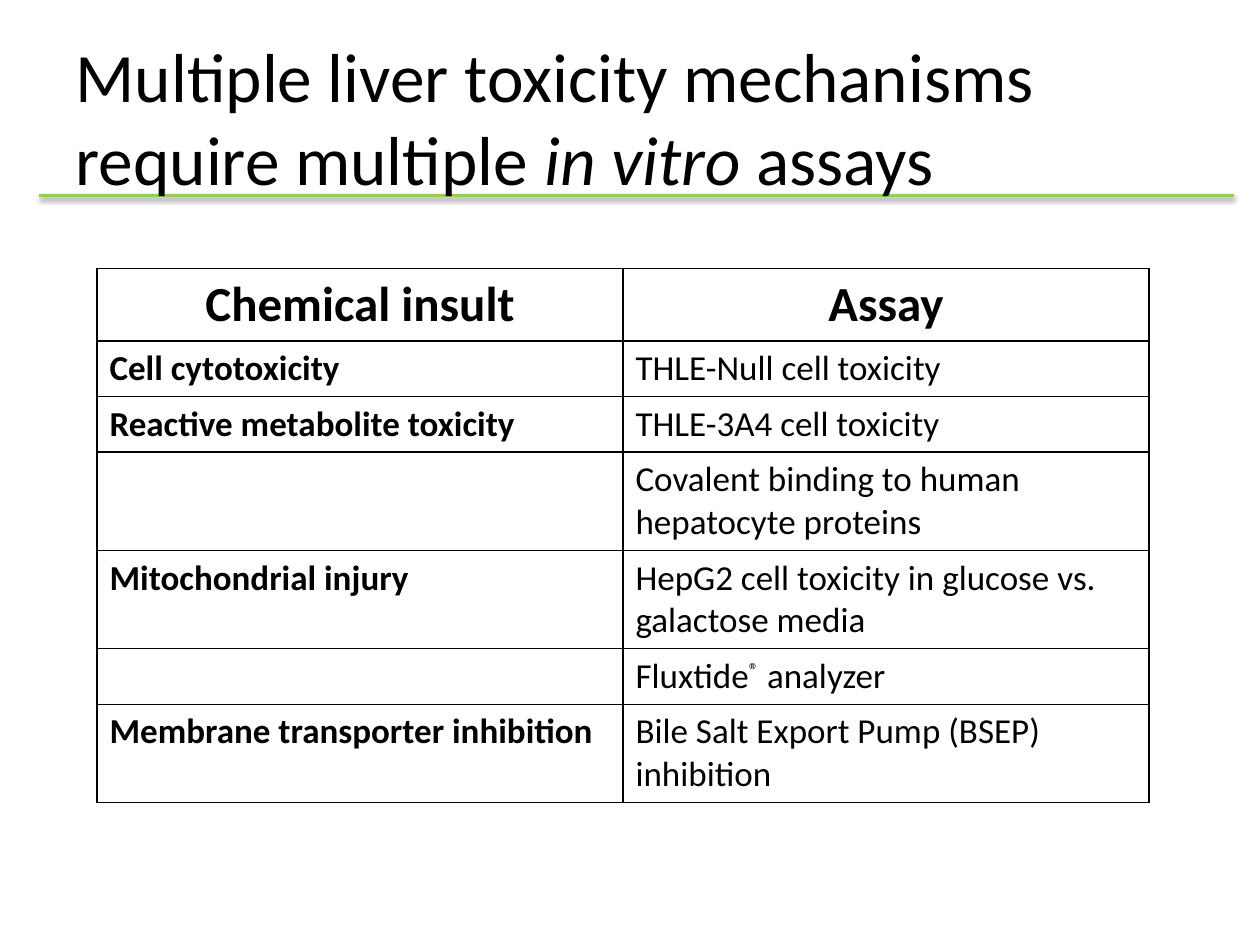
"""Build a slide with a table of liver toxicity mechanisms and their assays."""
import pptx
import pptx.util
import pptx.dml.color
import pptx.enum.text
import pptx.enum.shapes
import pptx.oxml
import pptx.oxml.ns

Pt = pptx.util.Pt
RGB = pptx.dml.color.RGBColor.from_string
PP_ALIGN = pptx.enum.text.PP_ALIGN
THEME = {
    "font": "Calibri", "text": "000000", "rule": "92D050", "border": "000000",
    "title": 39.6, "header": 28, "body": 20,
}
NS = pptx.oxml.ns.nsdecls("a")


def add_run(p, text, size, bold=False, italic=False):
    r = p.add_run()
    r.text = text
    r.font.name = THEME["font"]
    r.font.size = Pt(size)
    r.font.bold = bold
    r.font.italic = italic
    r.font.color.rgb = RGB(THEME["text"])
    return r


prs = pptx.Presentation()
prs.slide_width, prs.slide_height = Pt(720), Pt(540)
s = prs.slides.add_slide(prs.slide_layouts[5])

title = s.shapes.title
title.left, title.top, title.width, title.height = Pt(36), Pt(21.6), Pt(648), Pt(90)
tf = title.text_frame
tf.word_wrap = True
tf.auto_size = pptx.enum.text.MSO_AUTO_SIZE.NONE
tf.vertical_anchor = pptx.enum.text.MSO_ANCHOR.MIDDLE
p = tf.paragraphs[0]
p.alignment = PP_ALIGN.LEFT
add_run(p, "Multiple liver toxicity mechanisms", THEME["title"])
p.add_line_break()
add_run(p, "require multiple ", THEME["title"])
add_run(p, "in vitro", THEME["title"], italic=True)
add_run(p, " assays", THEME["title"])

rule = s.shapes.add_connector(
    pptx.enum.shapes.MSO_CONNECTOR.STRAIGHT, Pt(22.5), Pt(111.6), Pt(705), Pt(111.6))
rule.line.color.rgb = RGB(THEME["rule"])
rule.line.width = Pt(1.5)
rule._element.spPr.append(pptx.oxml.parse_xml(
    f'<a:effectLst {NS}><a:outerShdw blurRad="{Pt(3.1)}" dist="{Pt(1.6)}" dir="5400000" '
    'rotWithShape="0"><a:srgbClr val="000000"><a:alpha val="38000"/></a:srgbClr>'
    '</a:outerShdw></a:effectLst>'))
title._element.addprevious(rule._element)

rows = [
    ("Chemical insult", "Assay"),
    ("Cell cytotoxicity", "THLE-Null cell toxicity"),
    ("Reactive metabolite toxicity", "THLE-3A4 cell toxicity"),
    ("", "Covalent binding to human hepatocyte proteins"),
    ("Mitochondrial injury", "HepG2 cell toxicity in glucose vs. galactose media"),
    ("", "Fluxtide® analyzer"),
    ("Membrane transporter inhibition", "Bile Salt Export Pump (BSEP) inhibition"),
]
table = s.shapes.add_table(len(rows), 2, Pt(55.4), Pt(153.4), Pt(601.2), Pt(300)).table
for col in table.columns:
    col.width = Pt(300.6)
for i, row in enumerate(rows):
    table.rows[i].height = Pt(29.2)
    for j, text in enumerate(row):
        cell = table.cell(i, j)
        cell.fill.background()
        tcPr = cell._tc.get_or_add_tcPr()
        for k, side in enumerate(("lnL", "lnR", "lnT", "lnB")):
            tcPr.insert(k, pptx.oxml.parse_xml(
                f'<a:{side} {NS} w="{Pt(1)}"><a:solidFill><a:srgbClr val="{THEME["border"]}"/>'
                f'</a:solidFill></a:{side}>'))
        p = cell.text_frame.paragraphs[0]
        p.alignment = PP_ALIGN.CENTER if i == 0 else PP_ALIGN.LEFT
        size = THEME["header"] if i == 0 else THEME["body"]
        before, mark, after = text.partition("®")
        for part in filter(None, (before, mark, after)):
            r = add_run(p, part, size, bold=i == 0 or j == 0)
            if part == "®":
                r.font._element.set("baseline", "30000")

prs.save("out.pptx")
